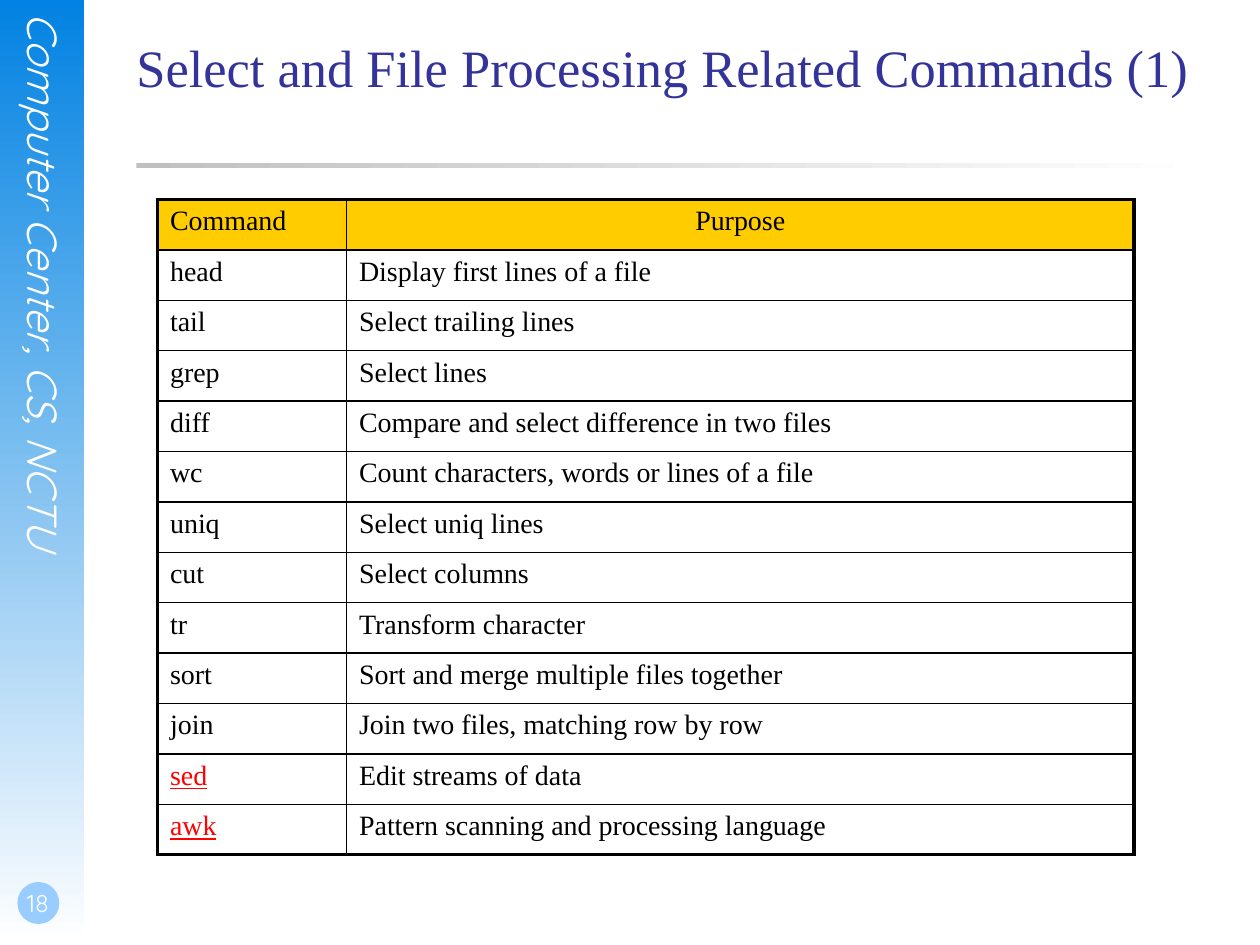
from lxml.etree import SubElement
from pptx import Presentation
from pptx.dml.color import RGBColor as RGB
from pptx.enum.shapes import MSO_SHAPE as SHAPE
from pptx.enum.text import MSO_ANCHOR as ANCHOR, PP_ALIGN as ALIGN
from pptx.oxml.ns import qn
from pptx.util import Inches, Pt

COLORS = {
    "sky": "0282E2", "white": "FFFFFF", "badge": "99CCFF", "rule": "C0C0C0",
    "title": "333399", "header": "FFCC00", "text": "000000", "accent": "FF0000",
}
SANS, SERIF = "Quicksand", "Times New Roman"
COLUMNS, ROWS = 120, 90
THIN, THICK = 1, 2.25

COMMANDS = [
    ("Command", "Purpose"),
    ("head", "Display first lines of a file"),
    ("tail", "Select trailing lines"),
    ("grep", "Select lines"),
    ("diff", "Compare and select difference in two files"),
    ("wc", "Count characters, words or lines of a file"),
    ("uniq", "Select uniq lines"),
    ("cut", "Select columns"),
    ("tr", "Transform character"),
    ("sort", "Sort and merge multiple files together"),
    ("join", "Join two files, matching row by row"),
    ("sed", "Edit streams of data"),
    ("awk", "Pattern scanning and processing language"),
]
HIGHLIGHTED = {"sed", "awk"}


def rgb(name):
    return RGB.from_string(COLORS[name])


class Deck:
    def __init__(self, width, height):
        self.prs = Presentation()
        self.prs.slide_width, self.prs.slide_height = Inches(width), Inches(height)
        self.s = self.prs.slides.add_slide(self.prs.slide_layouts[6])

    def x(self, columns):
        return round(self.prs.slide_width * columns / COLUMNS)

    def y(self, rows):
        return round(self.prs.slide_height * rows / ROWS)

    def box(self, left, top, width, height):
        return self.x(left), self.y(top), self.x(width), self.y(height)

    def shape(self, kind, box, color, fade_angle=None):
        sp = self.s.shapes.add_shape(kind, *self.box(*box))
        sp.shadow.inherit = False
        sp.line.fill.background()
        if fade_angle is None:
            sp.fill.solid()
            sp.fill.fore_color.rgb = rgb(color)
            return
        sp.fill.gradient()
        sp.fill.gradient_angle = fade_angle
        for stop, name, position in zip(sp.fill.gradient_stops, (color, "white"), (0, 1)):
            stop.color.rgb = rgb(name)
            stop.position = position

    def paragraph(self, tf, text, size, font, color, align=None, **style):
        p = tf.paragraphs[0]
        p.alignment = align
        r = p.add_run()
        r.text = text
        r.font.color.rgb = rgb(color)
        for key, value in {"size": Pt(size), "name": font, **style}.items():
            setattr(r.font, key, value)
        return p

    def text(self, box, text, size, font, color, margins=(0, 0, 0, 0),
             anchor=ANCHOR.TOP, vertical=False, **style):
        tf = self.s.shapes.add_textbox(*self.box(*box)).text_frame
        left, top, right, bottom = map(Inches, margins)
        frame = {"word_wrap": True, "vertical_anchor": anchor, "margin_left": left,
                 "margin_top": top, "margin_right": right, "margin_bottom": bottom}
        for key, value in frame.items():
            setattr(tf, key, value)
        if vertical:
            tf._txBody.bodyPr.set("vert", "eaVert")
        self.paragraph(tf, text, size, font, color, **style)

    def borders(self, cell, widths):
        tcPr = cell._tc.get_or_add_tcPr()
        for side, width in zip("LRTB", widths):
            ln = SubElement(tcPr, qn(f"a:ln{side}"), w=str(Pt(width)))
            fill = SubElement(ln, qn("a:solidFill"))
            SubElement(fill, qn("a:srgbClr"), val=COLORS["text"])

    def table(self, left, top, widths, row_height, rows):
        box = self.box(left, top, sum(widths), row_height * len(rows))
        table = self.s.shapes.add_table(len(rows), len(widths), *box).table
        table.first_row = table.horz_banding = False
        for column, width in zip(table.columns, widths):
            column.width = self.x(width)
        last_row, last_column = len(rows) - 1, len(widths) - 1
        for i, row in enumerate(rows):
            table.rows[i].height = self.y(row_height)
            for j, text in enumerate(row):
                cell = table.cell(i, j)
                edges = (j == 0, j == last_column, i == 0, i == last_row)
                self.borders(cell, [THICK if edge else THIN for edge in edges])
                if i == 0:
                    cell.fill.solid()
                    cell.fill.fore_color.rgb = rgb("header")
                else:
                    cell.fill.background()
                marked = text in HIGHLIGHTED
                p = self.paragraph(cell.text_frame, text, 16, SERIF,
                                   "accent" if marked else "text", underline=marked,
                                   align=ALIGN.CENTER if i == 0 and j else ALIGN.LEFT)
                space = SubElement(p._p.get_or_add_pPr(), qn("a:spcBef"))
                SubElement(space, qn("a:spcPct"), val="25000")


def main():
    deck = Deck(10, 7.5)
    deck.shape(SHAPE.RECTANGLE, (0, 0, 8, ROWS), "sky", fade_angle=270)
    deck.text((1.8, 1.2, 4.8, 61.3), "Computer Center, CS, NCTU", 24, SANS, "white",
              vertical=True, italic=True)
    deck.shape(SHAPE.OVAL, (1.65, 84, 4, 4), "badge")
    deck.text((0, 82, 7, 6), "18", 14, SANS, "white", margins=(0.02, 0, 0, 0.05),
              anchor=ANCHOR.BOTTOM, align=ALIGN.CENTER)
    deck.shape(SHAPE.RECTANGLE, (13, 15.5, 102, 0.5), "rule", fade_angle=0)
    deck.text((13, 3.33, 102, 15), "Select and File Processing Related Commands (1)",
              30, SERIF, "title")
    deck.table(15, 19, (18, 75), 4.8, COMMANDS)
    deck.prs.save("out.pptx")


if __name__ == "__main__":
    main()
